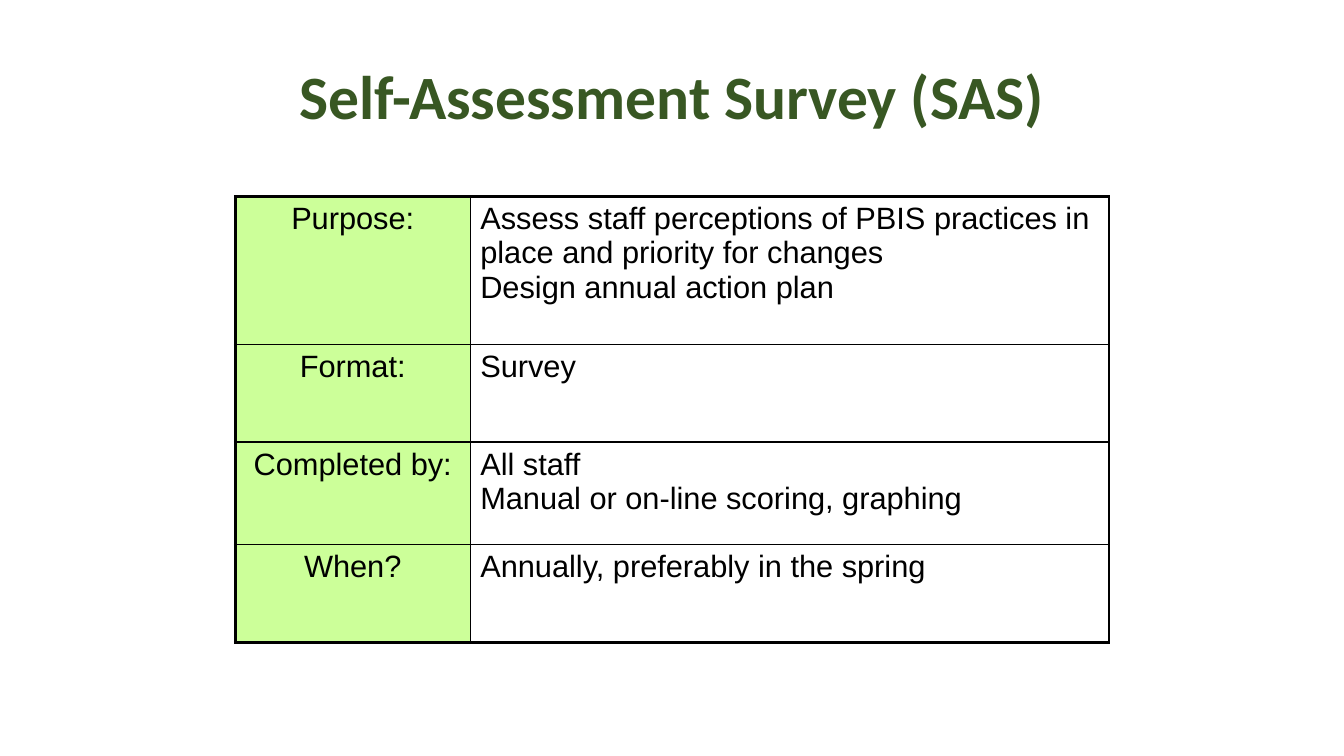
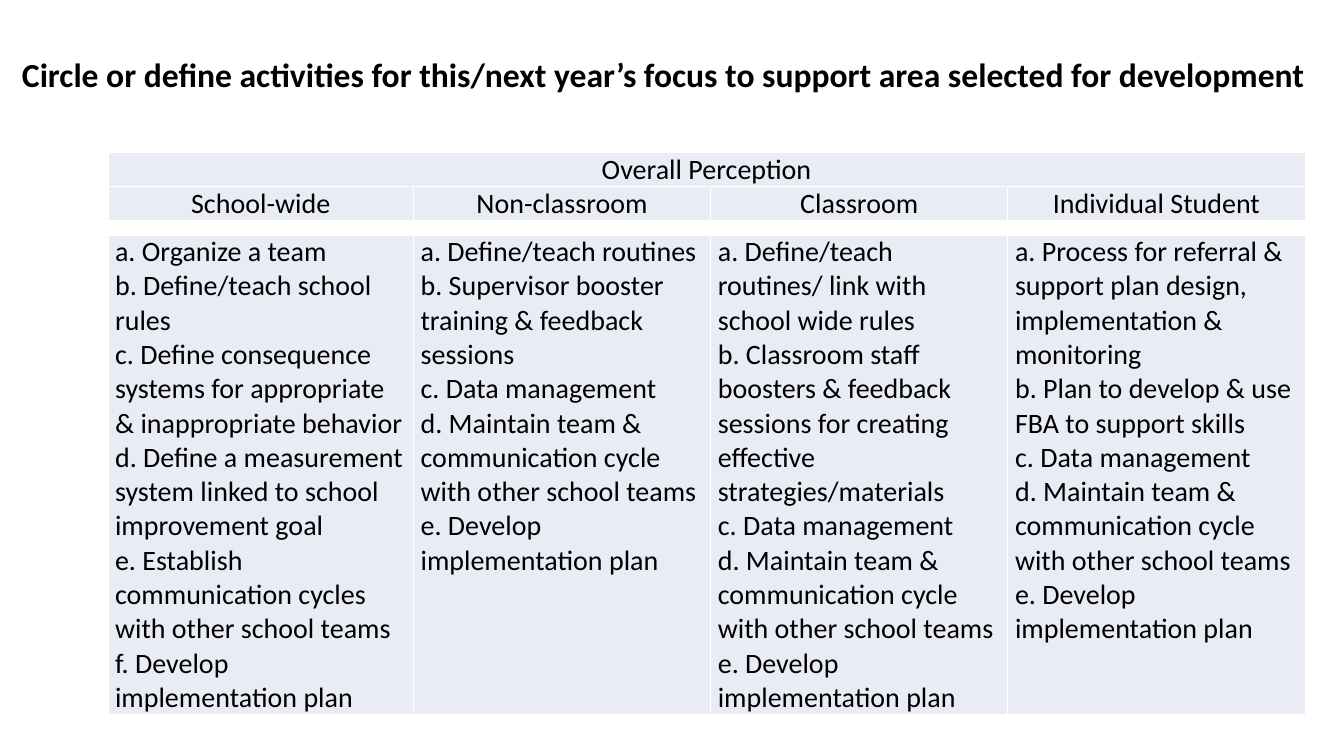
"""Build two slides on the Self-Assessment Survey and its follow-up activities."""
from lxml.etree import SubElement
from pptx import Presentation
from pptx.dml.color import RGBColor
from pptx.enum.text import MSO_ANCHOR, MSO_AUTO_SIZE, PP_ALIGN
from pptx.oxml.ns import qn
from pptx.util import Cm, Pt

COLORS = {
    "title": "385723",
    "text": "000000",
    "label": "CCFF99",
    "panel": "E9EBF5",
    "line": "000000",
    "gap": "FFFFFF",
}

SURVEY = [
    ("Purpose:", ["Assess staff perceptions of PBIS practices in place and priority for changes",
                  "Design annual action plan"]),
    ("Format:", ["Survey"]),
    ("Completed by:", ["All staff", "Manual or on-line scoring, graphing"]),
    ("When?", ["Annually, preferably in the spring"]),
]

TEAM_CYCLE = [
    "c. Data management",
    "d. Maintain team & communication cycle with other school teams",
    "e. Develop implementation plan",
]

ACTIVITIES = {
    "School-wide": [
        "a. Organize a team",
        "b. Define/teach school rules",
        "c. Define consequence systems for appropriate & inappropriate behavior",
        "d. Define a measurement system linked to school improvement goal",
        "e. Establish communication cycles with other school teams",
        "f. Develop implementation plan",
    ],
    "Non-classroom": [
        "a. Define/teach routines",
        "b. Supervisor booster training & feedback sessions",
        *TEAM_CYCLE,
    ],
    "Classroom": [
        "a. Define/teach routines/ link with school wide rules",
        "b. Classroom staff boosters & feedback sessions for creating effective strategies/materials",
        *TEAM_CYCLE,
    ],
    "Individual Student": [
        "a. Process for referral & support plan design, implementation & monitoring",
        "b. Plan to develop & use FBA to support skills",
        *TEAM_CYCLE,
    ],
}


def rgb(name):
    """Return the named colour."""
    return RGBColor.from_string(COLORS[name])


def write(tf, lines, size, font, color="text", bold=False, align=PP_ALIGN.LEFT):
    """Write one paragraph per line and format it."""
    tf.text = "\n".join(lines)
    for p in tf.paragraphs:
        p.alignment = align
        for r in p.runs:
            r.font.size = Pt(size)
            r.font.name = font
            r.font.bold = bold
            r.font.color.rgb = rgb(color)


def add_titled_slide(prs, title, box, size, color="text", align=PP_ALIGN.LEFT):
    """Add a slide whose title placeholder fills the given box."""
    s = prs.slides.add_slide(prs.slide_layouts[5])
    sp = s.shapes.title
    sp.left, sp.top, sp.width, sp.height = (Cm(v) for v in box)
    tf = sp.text_frame
    tf.word_wrap = True
    tf.auto_size = MSO_AUTO_SIZE.NONE
    tf.vertical_anchor = MSO_ANCHOR.MIDDLE
    write(tf, [title], size, "Calibri", color, True, align)
    tf.paragraphs[0].line_spacing = 0.9
    return s


def add_grid(s, left, top, widths, heights):
    """Add an unbanded table with the given column widths and row heights."""
    frame = s.shapes.add_table(len(heights), len(widths), Cm(left), Cm(top),
                               Cm(sum(widths)), Cm(sum(heights)))
    table = frame.table
    table.first_row = table.horz_banding = False
    for column, width in zip(table.columns, widths):
        column.width = Cm(width)
    for row, height in zip(table.rows, heights):
        row.height = Cm(height)
    return table


def set_borders(cell, color, widths):
    """Draw the left, right, top and bottom borders of a cell."""
    tc_pr = cell._tc.get_or_add_tcPr()
    for side, width in zip("LRTB", widths):
        ln = SubElement(tc_pr, qn(f"a:ln{side}"), w=str(Pt(width)))
        fill = SubElement(ln, qn("a:solidFill"))
        SubElement(fill, qn("a:srgbClr"), val=COLORS[color])


def fill_panel(cell, lines, align=PP_ALIGN.LEFT):
    """Fill a tinted cell that has narrow margins and white borders."""
    set_borders(cell, "gap", [1] * 4)
    cell.fill.solid()
    cell.fill.fore_color.rgb = rgb("panel")
    cell.margin_left = cell.margin_right = Cm(0.18)
    cell.margin_top = cell.margin_bottom = 0
    write(cell.text_frame, lines, 20, "Calibri", align=align)


def add_survey_table(s, left, top):
    """Add the labelled facts about the survey inside a heavy frame."""
    table = add_grid(s, left, top, [5.92, 16.1], [3.73, 2.46, 2.59, 2.46])
    last = len(SURVEY) - 1
    for i, (label, facts) in enumerate(SURVEY):
        name, detail = table.cell(i, 0), table.cell(i, 1)
        above = 2.25 if i == 0 else 1
        below = 2.25 if i == last else 1
        set_borders(name, "line", [2.25, 1, above, below])
        set_borders(detail, "line", [1, 2.25, above, below])
        name.fill.solid()
        name.fill.fore_color.rgb = rgb("label")
        detail.fill.background()
        write(name.text_frame, [label], 22, "Arial", align=PP_ALIGN.CENTER)
        write(detail.text_frame, facts, 22, "Arial")


def add_activity_tables(s, left, top):
    """Add the area headings and, below them, the activities of each area."""
    widths = [7.7, 7.49, 7.49, 7.49]
    head = add_grid(s, left, top, widths, [0.85, 0.85])
    body = add_grid(s, left, top + 2.08, widths, [11.86])
    head.cell(0, 0).merge(head.cell(0, len(widths) - 1))
    fill_panel(head.cell(0, 0), ["Overall Perception"], PP_ALIGN.CENTER)
    for i, (area, steps) in enumerate(ACTIVITIES.items()):
        fill_panel(head.cell(1, i), [area], PP_ALIGN.CENTER)
        fill_panel(body.cell(0, i), steps)


def main():
    """Build and save the presentation."""
    prs = Presentation()
    prs.slide_width, prs.slide_height = Cm(33.87), Cm(19.05)

    s = add_titled_slide(prs, "Self-Assessment Survey (SAS)", (5.51, 1.02, 22.86, 2.97),
                         44, "title", PP_ALIGN.CENTER)
    add_survey_table(s, 5.93, 4.95)

    s = add_titled_slide(
        prs,
        "Circle or define activities for this/next year’s focus to support area selected for development",
        (0.3, 1.3, 33.57, 1.27), 24)
    add_activity_tables(s, 2.72, 3.84)

    prs.save("out.pptx")


if __name__ == "__main__":
    main()
